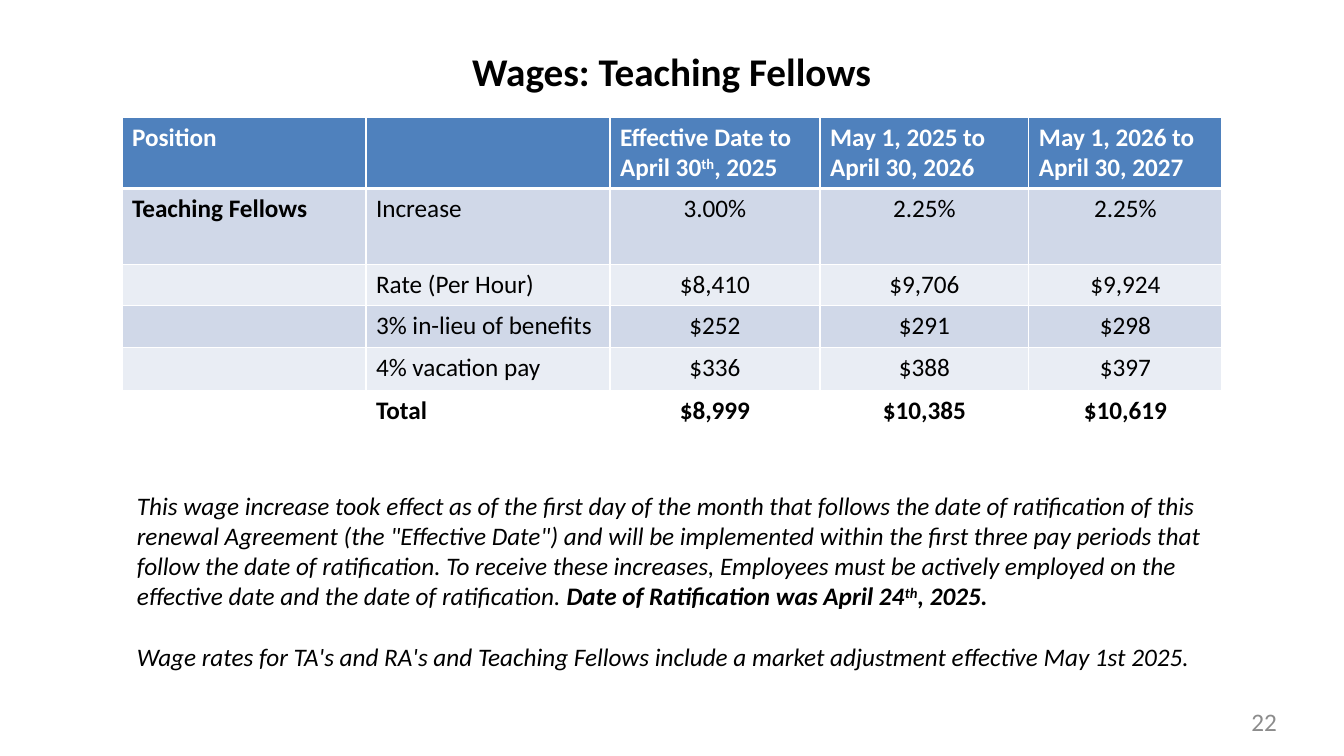
from lxml.etree import SubElement
from pptx import Presentation
from pptx.dml.color import RGBColor
from pptx.enum.text import MSO_ANCHOR as Anchor, PP_ALIGN as Align
from pptx.oxml.ns import qn
from pptx.util import Emu, Pt

PX = 914400 / 100.8
FONT = "Calibri"
WHITE, BLACK, GRAY = "FFFFFF", "000000", "8C8C8C"
HEADER_FILL, BAND_FILLS = "4F81BD", ("D0D8E8", "E9EDF4")

COLUMNS = (244, 244, 210, 209, 193)
ROWS = (71, 76, 41, 42, 43, 47)
WAGES = (
    ("Position", "", "Effective Date to April 30^th^, 2025",
     "May 1, 2025 to April 30, 2026", "May 1, 2026 to April 30, 2027"),
    ("Teaching Fellows", "Increase", "3.00%", "2.25%", "2.25%"),
    ("", "Rate (Per Hour)", "$8,410", "$9,706", "$9,924"),
    ("", "3% in-lieu of benefits", "$252", "$291", "$298"),
    ("", "4% vacation pay", "$336", "$388", "$397"),
    ("", "Total", "$8,999", "$10,385", "$10,619"),
)
EFFECTIVE = (
    "This wage increase took effect as of the first day of the month that follows "
    "the date of ratification of this renewal Agreement (the \"Effective Date\") and "
    "will be implemented within the first three pay periods that follow the date of "
    "ratification. To receive these increases, Employees must be actively employed on "
    "the effective date and the date of ratification. "
)
RATIFIED = "Date of Ratification was April 24^th^, 2025."
ADJUSTMENT = ("Wage rates for TA's and RA's and Teaching Fellows include a market "
              "adjustment effective May 1st 2025.")


def px(length):
    return Emu(round(length * PX))


def color(code):
    return RGBColor.from_string(code)


def style(para, size, code=BLACK, bold=False, italic=False, align=Align.LEFT):
    para.alignment = align
    font = para.font
    font.name, font.size, font.bold, font.italic = FONT, Pt(size), bold, italic
    font.color.rgb = color(code)


def add_spans(para, text, bold=None):
    for index, part in enumerate(text.split("^")):
        if part:
            span = para.add_run()
            span.text = part
            if bold is not None:
                span.font.bold = bold
            if index % 2:
                span.font._element.set("baseline", "30000")


def add_borders(cell, bottom):
    properties = cell._tc.get_or_add_tcPr()
    for index, side in enumerate(("lnL", "lnR", "lnT", "lnB")):
        width = bottom if side == "lnB" else 1
        line = properties.makeelement(qn(f"a:{side}"), {"w": str(Pt(width))})
        fill = SubElement(line, qn("a:solidFill"))
        SubElement(fill, qn("a:srgbClr"), val=WHITE)
        properties.insert(index, line)


def add_text_box(page, box):
    frame = page.shapes.add_textbox(*map(px, box)).text_frame
    frame.word_wrap = True
    return frame


def add_title(page, box):
    title = page.shapes.title
    title.left, title.top, title.width, title.height = map(px, box)
    title.text_frame.vertical_anchor = Anchor.MIDDLE
    para = title.text_frame.paragraphs[0]
    add_spans(para, "Wages: Teaching Fellows")
    style(para, 28, bold=True, align=Align.CENTER)


def add_wage_table(page, left, top):
    box = (left, top, sum(COLUMNS), sum(ROWS))
    table = page.shapes.add_table(len(ROWS), len(COLUMNS), *map(px, box)).table
    table.horz_banding = False
    for column, width in zip(table.columns, COLUMNS):
        column.width = px(width)
    last = len(ROWS) - 1
    for r, values in enumerate(WAGES):
        table.rows[r].height = px(ROWS[r])
        header = r == 0
        for c, text in enumerate(values):
            cell = table.cell(r, c)
            if r == last:
                cell.fill.background()
            else:
                cell.fill.solid()
                cell.fill.fore_color.rgb = color(HEADER_FILL if header else BAND_FILLS[(r - 1) % 2])
            add_borders(cell, 3 if header else 1)
            para = cell.text_frame.paragraphs[0]
            bold = header or c == 0 or r == last
            add_spans(para, text, bold)
            style(para, 18, WHITE if header else BLACK, bold,
                  align=Align.CENTER if c > 1 and not header else Align.LEFT)


def add_notes(page, box):
    frame = add_text_box(page, box)
    effective = frame.paragraphs[0]
    add_spans(effective, EFFECTIVE)
    add_spans(effective, RATIFIED, True)
    adjustment = frame.add_paragraph()
    add_spans(adjustment, ADJUSTMENT)
    adjustment.space_before = Pt(22)
    for para in (effective, adjustment):
        style(para, 18, italic=True)


def add_page_number(page, box):
    frame = add_text_box(page, box)
    frame.margin_left = frame.margin_right = frame.margin_top = frame.margin_bottom = 0
    frame.vertical_anchor = Anchor.MIDDLE
    para = frame.paragraphs[0]
    add_spans(para, "22")
    style(para, 18, GRAY, align=Align.RIGHT)


def main():
    deck = Presentation()
    deck.slide_width, deck.slide_height = px(1344), px(756)
    page = deck.slides.add_slide(deck.slide_layouts[5])
    add_title(page, (184, 42, 975, 57))
    add_wage_table(page, 122, 117)
    add_notes(page, (127, 485, 1125, 224))
    add_page_number(page, (968, 702, 309, 38))
    deck.save("out.pptx")


if __name__ == "__main__":
    main()
